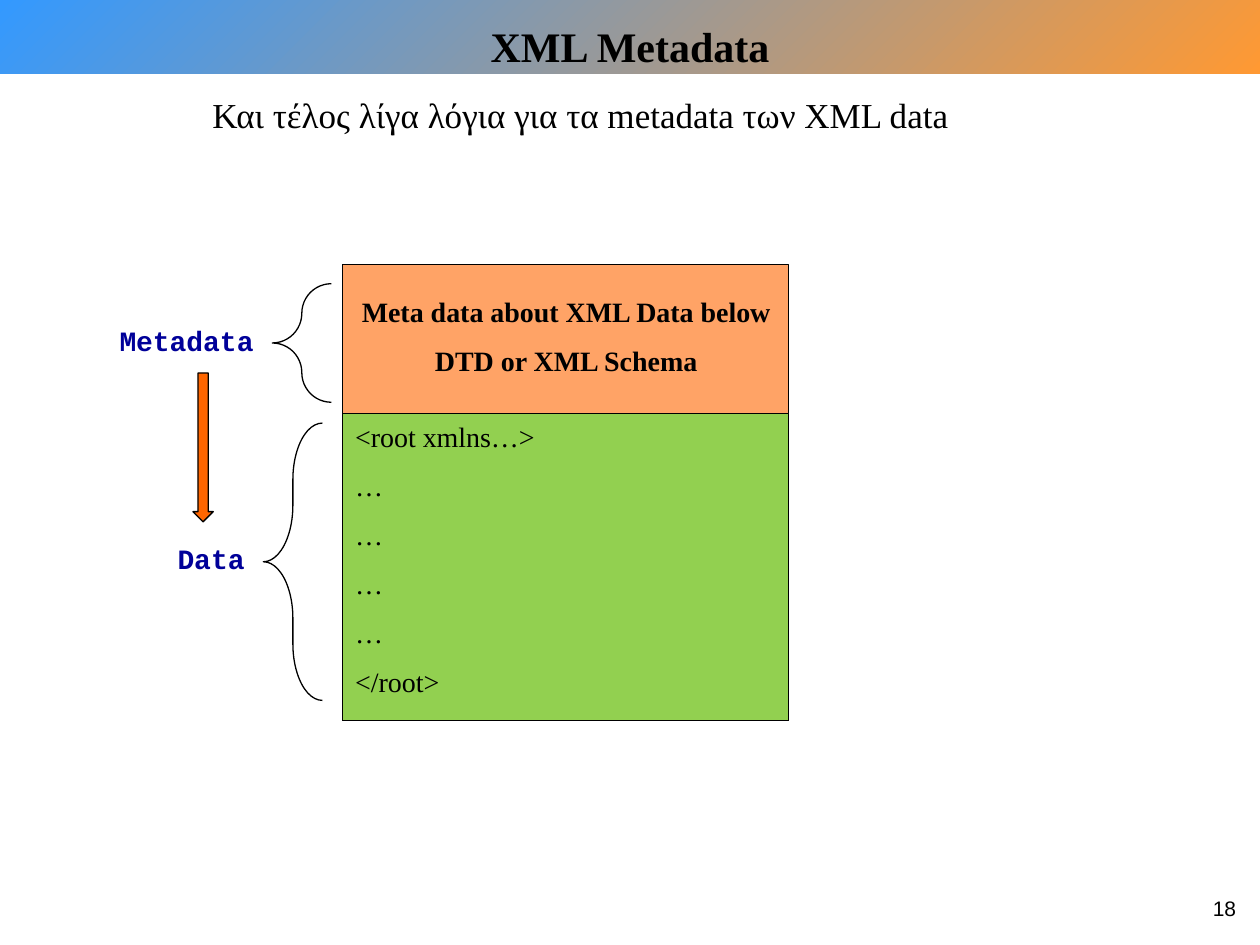
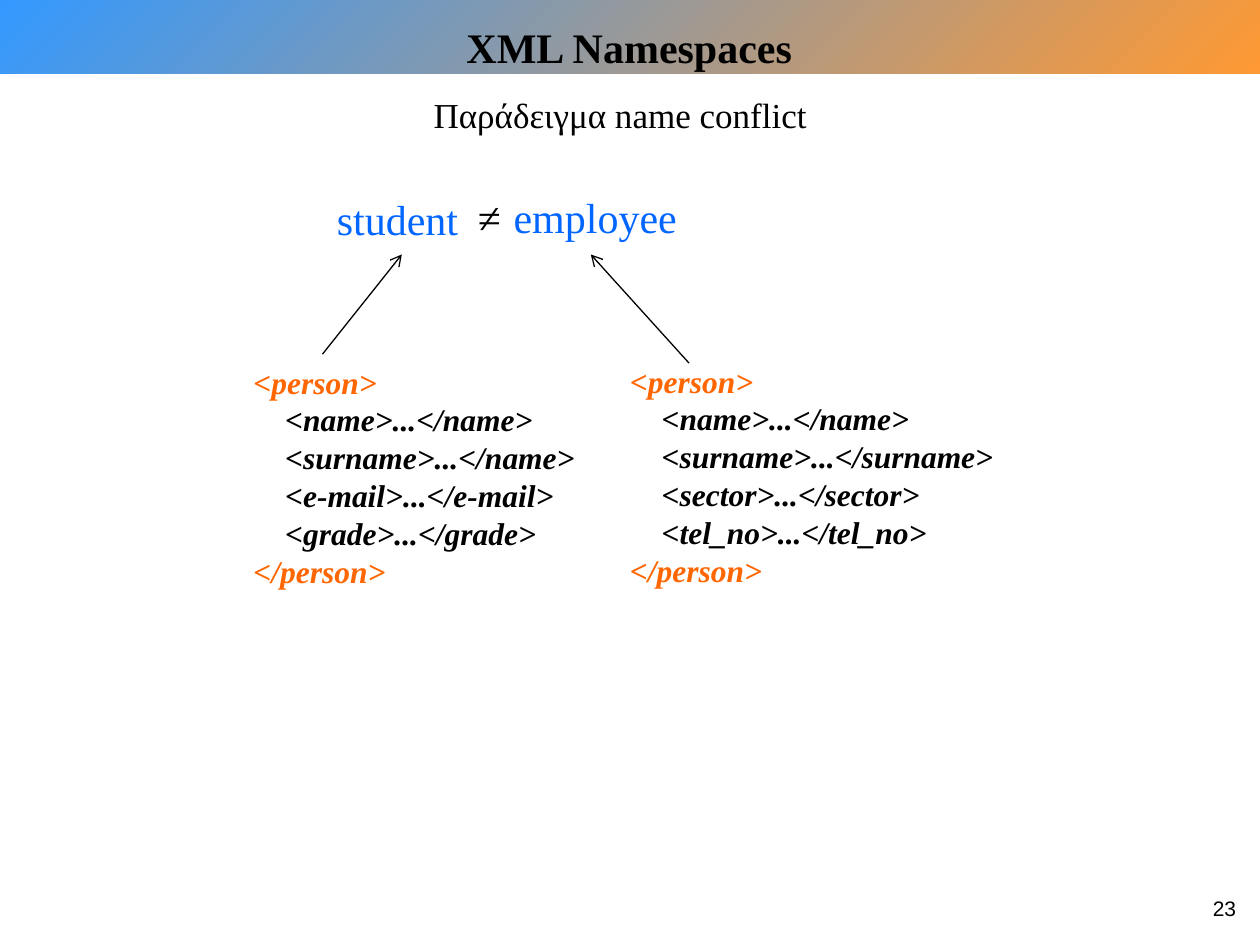
from dataclasses import dataclass, replace

from lxml import etree
from pptx import Presentation
from pptx.dml.color import RGBColor
from pptx.enum.shapes import MSO_CONNECTOR, MSO_SHAPE
from pptx.enum.text import MSO_ANCHOR, MSO_AUTO_SIZE, PP_ALIGN
from pptx.oxml.ns import qn
from pptx.util import Cm, Pt

RECT, BRACE, ARROW = MSO_SHAPE.RECTANGLE, MSO_SHAPE.LEFT_BRACE, MSO_SHAPE.DOWN_ARROW
STRAIGHT = MSO_CONNECTOR.STRAIGHT
TOP, MIDDLE = MSO_ANCHOR.TOP, MSO_ANCHOR.MIDDLE
LEFT, CENTER, RIGHT = PP_ALIGN.LEFT, PP_ALIGN.CENTER, PP_ALIGN.RIGHT
FIXED = MSO_AUTO_SIZE.NONE

BLACK, NAVY, BLUE = "000000", "000099", "0066FF"
ORANGE, PEACH, GREEN = "FF6600", "FFA366", "92D050"
SKY, AMBER = "3399FF", "FF9933"


@dataclass(frozen=True)
class Box:
    left: float
    top: float
    width: float
    height: float


@dataclass(frozen=True)
class Style:
    size: float
    font: str = "Times New Roman"
    color: str = BLACK
    bold: bool = False
    slant: bool = False
    align: PP_ALIGN = LEFT
    gap: float = 0
    pitch: float = 1.0


@dataclass(frozen=True)
class Line:
    text: str
    color: str = ""
    indent: float = 0


@dataclass(frozen=True)
class Form:
    kind: MSO_SHAPE
    box: Box
    fill: str = ""
    bend: float = 0


@dataclass(frozen=True)
class Label:
    box: Box
    lines: list[Line]
    style: Style
    wrap: bool = True


TITLE = Style(24, bold=True, align=CENTER)
LEAD = Style(20, align=CENTER)
PAGE = Style(12, "Arial", align=RIGHT)
CODE = Style(16, gap=8.8)
META = replace(CODE, bold=True, align=CENTER)
TAG = Style(16, "Courier New", NAVY, bold=True, pitch=0.8)
WORD = Style(24, color=BLUE, align=CENTER)
MARKUP = Style(18, bold=True, slant=True)

PAGE_BOX = Box(24.1, 17.93, 1.07, 1.02)


def rgb(code: str) -> RGBColor:
    return RGBColor.from_string(code)


def place(shape, box: Box) -> None:
    shape.left, shape.top = Cm(box.left), Cm(box.top)
    shape.width, shape.height = Cm(box.width), Cm(box.height)


def write(frame, lines: list[Line], style: Style, anchor=TOP, wrap=True) -> None:
    frame.word_wrap = wrap
    frame.auto_size = FIXED
    frame.vertical_anchor = anchor
    for i, line in enumerate(lines):
        para = frame.add_paragraph() if i else frame.paragraphs[0]
        para.alignment = style.align
        para.line_spacing = style.pitch
        para.space_before = Pt(style.gap if i else 0)
        # Plain paragraphs: own indent, no bullet
        props = para._p.get_or_add_pPr()
        props.set("marL", str(Cm(line.indent)))
        props.set("indent", "0")
        etree.SubElement(props, qn("a:buNone"))
        run = para.add_run()
        run.text = line.text
        font = run.font
        font.name, font.size = style.font, Pt(style.size)
        font.bold, font.italic = style.bold, style.slant
        font.color.rgb = rgb(line.color or style.color)


def add_text(slide, label: Label):
    box = label.box
    shape = slide.shapes.add_textbox(Cm(box.left), Cm(box.top), Cm(box.width), Cm(box.height))
    write(shape.text_frame, label.lines, label.style, wrap=label.wrap)
    return shape


def add_form(slide, form: Form):
    box = form.box
    shape = slide.shapes.add_shape(
        form.kind, Cm(box.left), Cm(box.top), Cm(box.width), Cm(box.height))
    shape.shadow.inherit = False
    if form.bend:
        shape.adjustments[0] = form.bend
    if form.fill:
        shape.fill.solid()
        shape.fill.fore_color.rgb = rgb(form.fill)
    else:
        shape.fill.background()
    shape.line.color.rgb = rgb(BLACK)
    shape.line.width = Pt(0.75)
    return shape


def add_arrow(slide, start: tuple[float, float], end: tuple[float, float]) -> None:
    link = slide.shapes.add_connector(
        STRAIGHT, Cm(start[0]), Cm(start[1]), Cm(end[0]), Cm(end[1]))
    link.line.color.rgb = rgb(BLACK)
    link.line.width = Pt(0.75)
    edge = link.element.find(".//" + qn("a:ln"))
    etree.SubElement(edge, qn("a:tailEnd"), type="arrow")
    etree.SubElement(edge.getparent(), qn("a:effectLst"))


def add_band(slide) -> None:
    """Draw the colour band and hand it to the layout, behind all else."""
    band = add_form(slide, Form(RECT, Box(0, 0, 25.4, 1.48)))
    band.line.fill.background()
    band.fill.gradient()
    band.fill.gradient_angle = 315
    for stop, code in zip(band.fill.gradient_stops, (SKY, AMBER)):
        stop.color.rgb = rgb(code)
    band.element.find(".//" + qn("p:cNvPr")).set("id", "20")
    slide.slide_layout.shapes.element.insert(2, band.element)


def add_slide(deck, title: str, head: Box, lead: str, body: Box, page: str):
    slide = deck.slides.add_slide(deck.slide_layouts[1])
    top, main = slide.placeholders
    place(top, head)
    write(top.text_frame, [Line(title)], TITLE, MIDDLE)
    place(main, body)
    write(main.text_frame, [Line(lead)], LEAD)
    add_text(slide, Label(PAGE_BOX, [Line(page)], PAGE))
    return slide


def draw_meta(slide) -> None:
    # File blocks, braces and arrow
    for form in (
        Form(RECT, Box(6.91, 5.33, 8.99, 9.2), PEACH),
        Form(RECT, Box(6.91, 8.33, 8.99, 6.2), GREEN),
        Form(BRACE, Box(5.31, 8.53, 1.19, 5.59), bend=0.96),
        Form(BRACE, Box(5.49, 5.72, 1.19, 2.39), bend=0.96),
        Form(ARROW, Box(3.89, 7.52, 0.41, 3), ORANGE),
    ):
        add_form(slide, form)

    # Block text and tags
    code = ["<root xmlns…>", *["…"] * 4, "</root>"]
    about = ["Meta data about XML Data below", "DTD or XML Schema"]
    for box, texts, style in (
        (Box(6.91, 8.33, 5.59, 6.07), code, CODE),
        (Box(6.93, 5.82, 8.97, 1.96), about, META),
        (Box(3.33, 10.92, 2.39, 0.79), ["Data"], TAG),
        (Box(2.16, 6.53, 3.84, 0.79), ["Metadata"], TAG),
    ):
        add_text(slide, Label(box, [Line(text) for text in texts], style))


def draw_names(slide) -> None:
    # Two person records
    pupil = ["<name>...</name>", "<surname>...</name>",
             "<e-mail>...</e-mail>", "<grade>...</grade>"]
    staff = ["<name>...</name>", "<surname>...</surname>",
             "<sector>...</sector>", "<tel_no>...</tel_no>"]
    for left, top, tags in ((5.11, 7.16, pupil), (12.7, 7.14, staff)):
        lines = [Line("<person>", ORANGE),
                 *[Line(tag, indent=0.64) for tag in tags],
                 Line("</person>", ORANGE)]
        frame = add_text(slide, Label(Box(left, top, 8.61, 4.75), lines, MARKUP)).text_frame
        frame.vertical_anchor = MIDDLE
        frame.margin_left = frame.margin_bottom = 0

    # Arrows to the words
    add_arrow(slide, (6.5, 7.14), (8.1, 5.13))
    add_arrow(slide, (13.89, 7.32), (11.91, 5.13))

    # The words that differ
    for text, color, box in (
        ("student", BLUE, Box(6.53, 3.78, 2.97, 1.3)),
        ("employee", BLUE, Box(10.08, 3.73, 3.84, 1.27)),
        ("≠", BLACK, Box(9.37, 3.73, 0.99, 1.3)),
    ):
        add_text(slide, Label(box, [Line(text, color)], WORD, wrap=False))


def main() -> None:
    deck = Presentation()
    deck.slide_width, deck.slide_height = Cm(25.4), Cm(19.05)

    meta = add_slide(deck, "XML Metadata", Box(0, 0.28, 25.4, 1.27),
                     "Και τέλος λίγα λόγια για τα metadata των XML data",
                     Box(2.6, 1.75, 18.21, 1.12), "18")
    add_band(meta)
    draw_meta(meta)

    names = add_slide(deck, "XML Namespaces", Box(1.7, 0, 21.97, 1.9),
                      "Παράδειγμα name conflict", Box(8.1, 1.75, 8.81, 1.12), "23")
    draw_names(names)

    deck.save("out.pptx")


if __name__ == "__main__":
    main()
